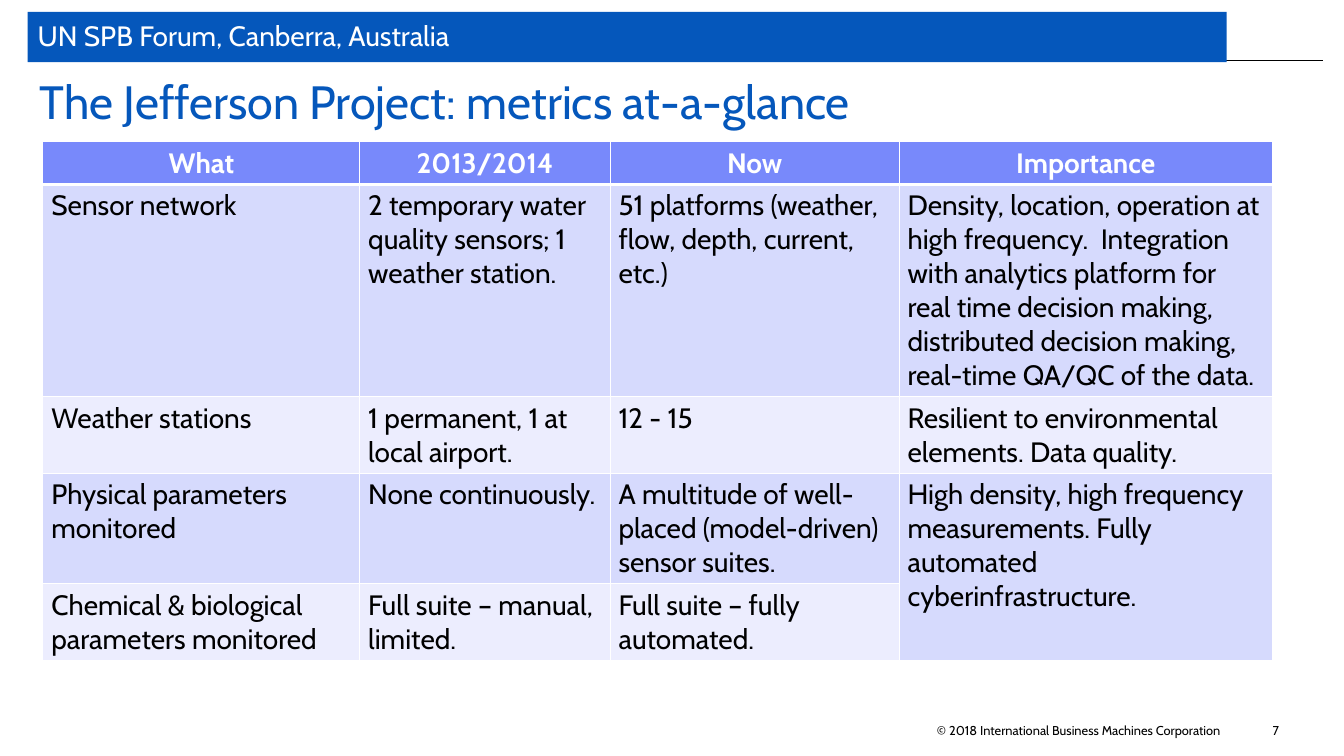
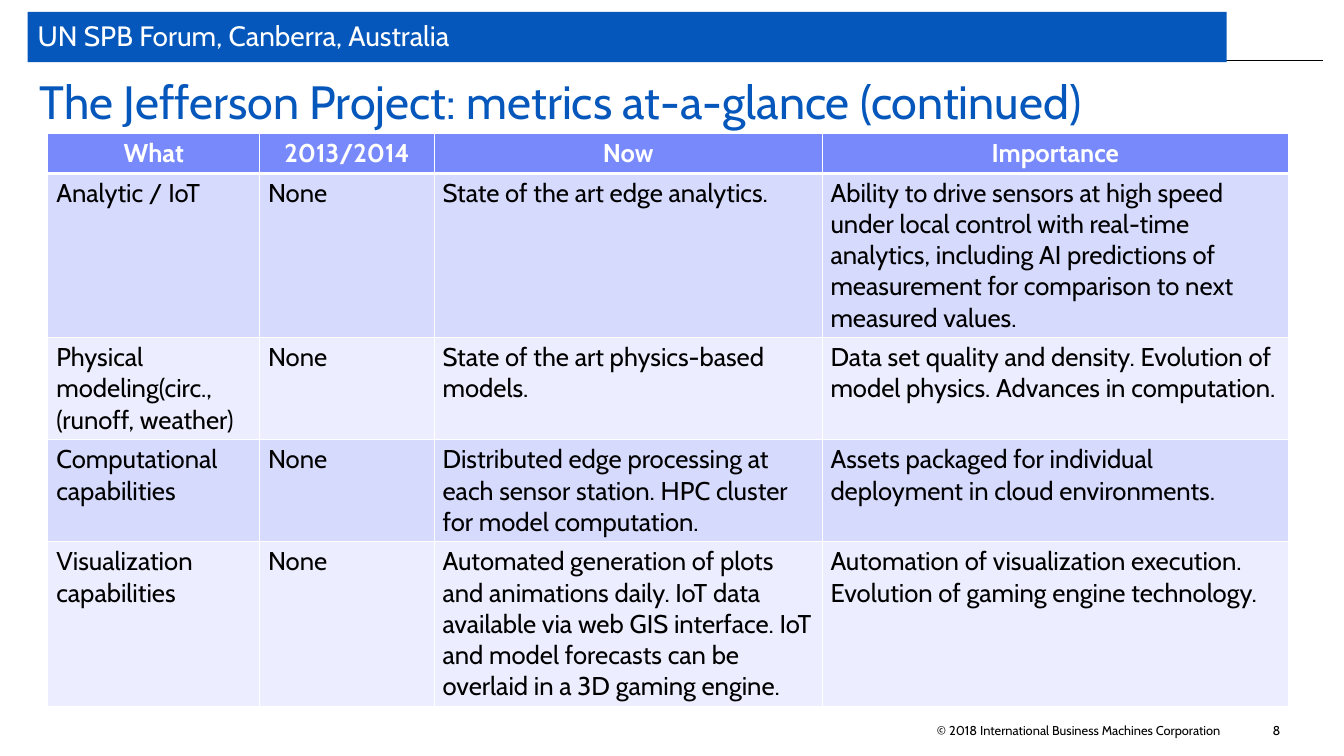
from lxml import etree
from pptx import Presentation
from pptx.dml.color import RGBColor
from pptx.enum.shapes import MSO_CONNECTOR, MSO_SHAPE
from pptx.enum.text import MSO_ANCHOR, MSO_AUTO_SIZE, PP_ALIGN
from pptx.oxml.ns import qn
from pptx.util import Cm, Pt

LEFT, CENTER = PP_ALIGN.LEFT, PP_ALIGN.CENTER
TOP, MIDDLE = MSO_ANCHOR.TOP, MSO_ANCHOR.MIDDLE
NO_AUTOFIT = MSO_AUTO_SIZE.NONE
RECTANGLE = MSO_SHAPE.RECTANGLE
STRAIGHT = MSO_CONNECTOR.STRAIGHT

BLUE = RGBColor(0x05, 0x57, 0xBB)
HEADER_BLUE = RGBColor(0x78, 0x89, 0xFB)
BAND_DARK = RGBColor(0xD6, 0xDA, 0xFD)
BAND_LIGHT = RGBColor(0xEC, 0xED, 0xFE)
BLACK = RGBColor(0, 0, 0)
WHITE = RGBColor(0xFF, 0xFF, 0xFF)

FONT = "Cabin"
TITLE_ONLY = 5
MARGIN = Cm(0.84)
RULE_Y = Cm(1.83)
HEADINGS = ["What", "2013/2014", "Now", "Importance"]

METRICS = [
    HEADINGS,
    ["Sensor network",
     "2 temporary water quality sensors; 1 weather station.",
     "51 platforms (weather, flow, depth, current, etc.)",
     "Density, location, operation at high frequency.  Integration with "
     "analytics platform for real time decision making, distributed "
     "decision making, real-time QA/QC of the data."],
    ["Weather stations", "1 permanent, 1 at local airport.", "12 - 15",
     "Resilient to environmental elements. Data quality."],
    ["Physical parameters monitored", "None continuously.",
     "A multitude of well-placed (model-driven) sensor suites.",
     "High density, high frequency measurements. Fully automated "
     "cyberinfrastructure."],
    ["Chemical & biological parameters monitored",
     "Full suite – manual, limited.", "Full suite – fully automated.", None],
]

METRICS_CONTINUED = [
    HEADINGS,
    ["Analytic / IoT", "None", "State of the art edge analytics.",
     "Ability to drive sensors at high speed under local control with "
     "real-time analytics, including AI predictions of measurement for "
     "comparison to next measured values."],
    ["Physical modeling(circ., (runoff, weather)", "None",
     "State of the art physics-based models.",
     "Data set quality and density. Evolution of model physics. "
     "Advances in computation."],
    ["Computational capabilities", "None",
     "Distributed edge processing at each sensor station. HPC cluster "
     "for model computation.",
     "Assets packaged for individual deployment in cloud environments."],
    ["Visualization capabilities", "None",
     "Automated generation of plots and animations daily. IoT data "
     "available via web GIS interface. IoT and model forecasts can be "
     "overlaid in a 3D gaming engine.",
     "Automation of visualization execution. Evolution of gaming engine "
     "technology."],
]


def set_borders(cell, bottom_width):
    """Draw white cell borders; must run before the cell gets its fill."""
    properties = cell._tc.get_or_add_tcPr()
    for side in ("lnL", "lnR", "lnT", "lnB"):
        width = Pt(bottom_width if side == "lnB" else 1)
        border = etree.SubElement(properties, qn(f"a:{side}"), w=str(width))
        fill = etree.SubElement(border, qn("a:solidFill"))
        etree.SubElement(fill, qn("a:srgbClr"), val=str(WHITE))


class Deck:
    """Holds the presentation, its style and the slide being built."""

    def __init__(self):
        self.prs = Presentation()
        self.prs.slide_width, self.prs.slide_height = Cm(40.64), Cm(22.86)
        self.slide = None

    def add_text(self, frame, text, size, color, align=LEFT, bold=False):
        paragraph = frame.paragraphs[0]
        paragraph.alignment = align
        run = paragraph.add_run()
        run.text = text
        font = run.font
        font.name, font.size, font.bold = FONT, Pt(size), bold
        font.color.rgb = color
        return paragraph

    def set_frame(self, frame, inset_x, inset_y, anchor=TOP):
        frame.word_wrap = True
        frame.auto_size = NO_AUTOFIT
        frame.vertical_anchor = anchor
        frame.margin_left = frame.margin_right = Cm(inset_x)
        frame.margin_top = frame.margin_bottom = Cm(inset_y)

    def add_slide(self, title, number):
        layout = self.prs.slide_layouts[TITLE_ONLY]
        self.slide = self.prs.slides.add_slide(layout)
        self.rule()
        self.banner("UN SPB Forum, Canberra, Australia")
        self.title(title)
        self.small_text("© 2018 International Business Machines Corporation",
                        (27.97, 21.67, 10.13, 0.84), 0.36, 0.18)
        self.small_text(str(number), (38.48, 21.84, 1.83, 0.46), 0, 0)

    def rule(self):
        line = self.slide.shapes.add_connector(
            STRAIGHT, MARGIN, RULE_Y, Cm(40), RULE_Y)
        line.line.color.rgb = BLACK
        line.line.width = Pt(0.75)
        etree.SubElement(line._element.spPr, qn("a:effectLst"))

    def banner(self, text):
        band = self.slide.shapes.add_shape(
            RECTANGLE, MARGIN, Cm(0.36), Cm(36.25), Cm(1.52))
        band.shadow.inherit = False
        band.fill.solid()
        band.fill.fore_color.rgb = BLUE
        band.line.fill.background()
        self.set_frame(band.text_frame, 0.3, 0.15, MIDDLE)
        self.add_text(band.text_frame, text, 24, WHITE).line_spacing = 0.9

    def title(self, text):
        title = self.slide.shapes.title
        title.left, title.top = MARGIN, Cm(2.03)
        title.width, title.height = Cm(37.9), Cm(2.13)
        self.set_frame(title.text_frame, 0.36, 0.18)
        self.add_text(title.text_frame, text, 40, BLUE)

    def small_text(self, text, box, inset_x, inset_y):
        frame = self.slide.shapes.add_textbox(*map(Cm, box)).text_frame
        self.set_frame(frame, inset_x, inset_y)
        self.add_text(frame, text, 11, BLACK)

    def table(self, rows, left, top, widths, heights, size):
        """Add a banded table; a None cell joins the cell above it."""
        table = self.slide.shapes.add_table(
            len(rows), len(widths), Cm(left), Cm(top),
            Cm(sum(widths)), Cm(sum(heights))).table
        table.horz_banding = False
        for column, width in zip(table.columns, widths):
            column.width = Cm(width)
        for row, height in zip(table.rows, heights):
            row.height = Cm(height)
        for r, texts in enumerate(rows):
            header = r == 0
            band = HEADER_BLUE if header else (BAND_LIGHT, BAND_DARK)[r % 2]
            for c, text in enumerate(texts):
                cell = table.cell(r, c)
                set_borders(cell, 3 if header else 1)
                cell.fill.solid()
                cell.fill.fore_color.rgb = band
                if text is None:
                    table.cell(r - 1, c).merge(cell)
                else:
                    self.add_text(cell.text_frame, text, size,
                                  WHITE if header else BLACK,
                                  CENTER if header else LEFT, header)


def main():
    deck = Deck()
    title = "The Jefferson Project: metrics at-a-glance"

    deck.add_slide(title, 7)
    deck.table(METRICS, 1.3, 4.29, [9.58, 7.57, 8.74, 11.28],
               [1.24, 6.35, 2.28, 3.3, 2.28], 24)

    deck.add_slide(f"{title} (continued)", 8)
    deck.table(METRICS_CONTINUED, 1.45, 4.04, [6.4, 5.28, 11.73, 14.1],
               [1.16, 4.9, 3.05, 3.05, 4.9], 22)

    deck.prs.save("out.pptx")


if __name__ == "__main__":
    main()
